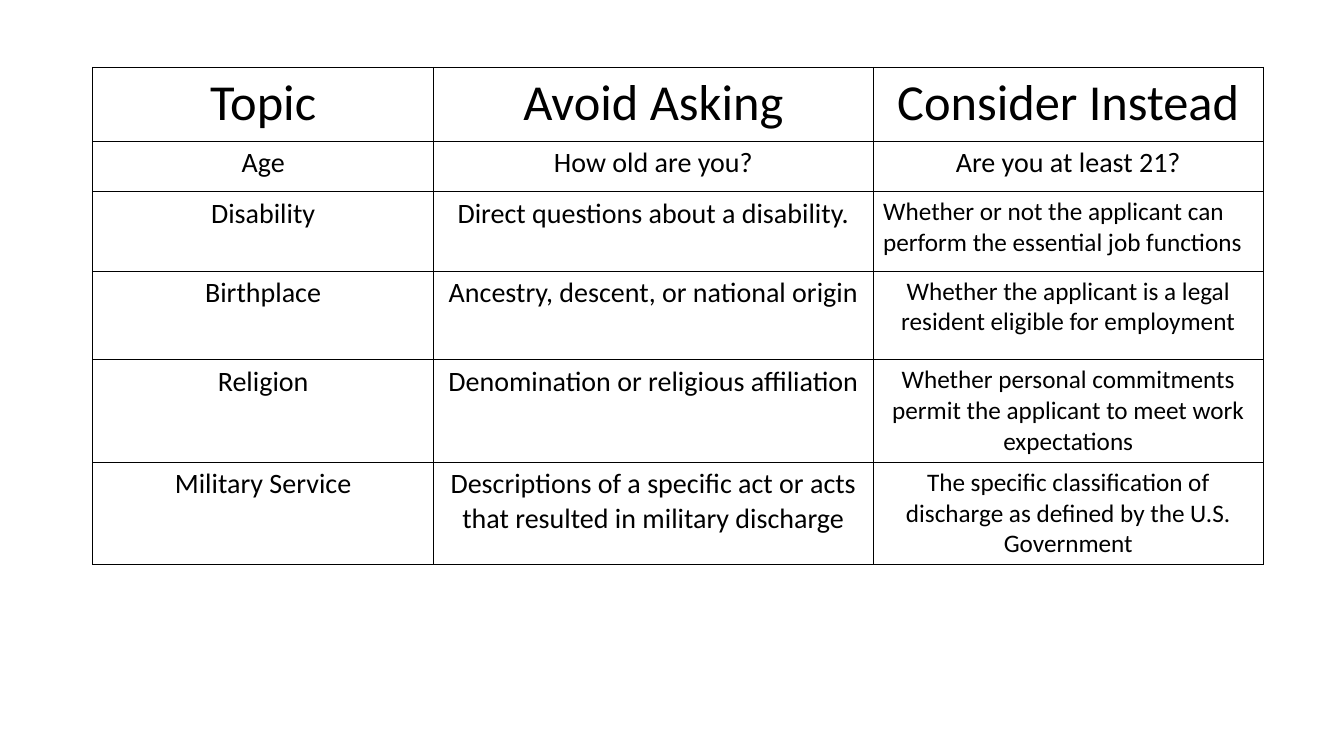
from dataclasses import dataclass

from lxml import etree
from pptx import Presentation
from pptx import util as u
from pptx.dml.color import RGBColor
from pptx.enum import text
from pptx.oxml import ns

SCALE = 9144  # EMU per px, 100 px to the inch
INK = "000000"
FONT = "Calibri"
LEFT, TOP = 92, 67
COLS = (338, 436, 387)
HEAD, BODY, HINT = 36, 20, 18  # text sizes in points
MID, START = text.PP_ALIGN.CENTER, text.PP_ALIGN.LEFT


@dataclass
class Row:
    high: int
    topic: str
    avoid: str
    instead: str
    sizes: tuple[int, int, int] = (BODY, BODY, HINT)
    last: text.PP_ALIGN = MID  # alignment of the third column


ROWS = (
    Row(73, "Topic", "Avoid Asking", "Consider Instead", (HEAD,) * 3),
    Row(50, "Age", "How old are you?", "Are you at least 21?", (BODY,) * 3),
    Row(79, "Disability", "Direct questions about a disability.",
        "Whether or not the applicant can perform the essential job functions",
        last=START),
    Row(88, "Birthplace", "Ancestry, descent, or national origin",
        "Whether the applicant is a legal resident eligible for employment"),
    Row(94, "Religion", "Denomination or religious affiliation",
        "Whether personal commitments permit the applicant to meet work expectations"),
    Row(94, "Military Service",
        "Descriptions of a specific act or acts that resulted in military discharge",
        "The specific classification of discharge as defined by the U.S. Government"),
)


def px(count: int) -> u.Emu:
    return u.Emu(count * SCALE)


def color(code: str) -> RGBColor:
    return RGBColor.from_string(code)


def border(cell, code: str, width: float) -> None:
    props = cell._tc.get_or_add_tcPr()
    for side in ("L", "R", "T", "B"):
        line = etree.SubElement(props, ns.qn(f"a:ln{side}"), w=str(u.Pt(width)))
        fill = etree.SubElement(line, ns.qn("a:solidFill"))
        etree.SubElement(fill, ns.qn("a:srgbClr"), val=code)


def write(cell, words: str, size: int, align: text.PP_ALIGN) -> None:
    border(cell, INK, 1)
    cell.fill.background()
    para = cell.text_frame.paragraphs[0]
    para.text = words
    para.alignment = align
    font = para.runs[0].font
    font.name = FONT
    font.size = u.Pt(size)
    font.bold = False
    font.color.rgb = color(INK)


def main() -> None:
    deck = Presentation()
    deck.slide_width, deck.slide_height = px(1333), px(750)
    slide = deck.slides.add_slide(deck.slide_layouts[6])

    # Question table
    frame = slide.shapes.add_table(
        len(ROWS), len(COLS), px(LEFT), px(TOP),
        px(sum(COLS)), px(sum(row.high for row in ROWS)))
    table = frame.table
    table.first_row = table.horz_banding = False
    for col, width in zip(table.columns, COLS):
        col.width = px(width)

    # Cells
    for line, row in zip(table.rows, ROWS):
        line.height = px(row.high)
        words = (row.topic, row.avoid, row.instead)
        for cell, word, size, align in zip(
                line.cells, words, row.sizes, (MID, MID, row.last)):
            write(cell, word, size, align)

    deck.save("out.pptx")


if __name__ == "__main__":
    main()
